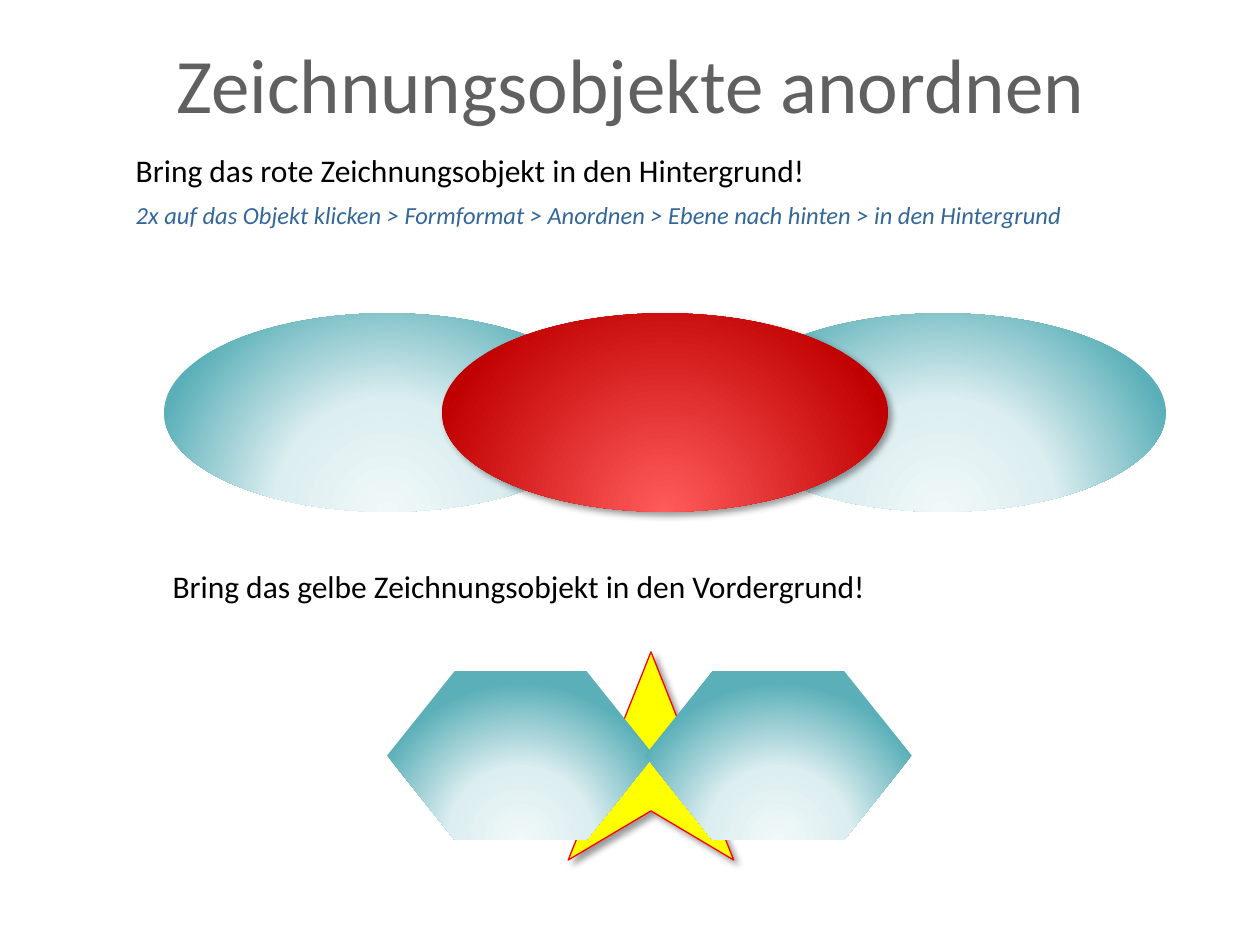
"""Build the slide on arranging drawing objects in front of and behind each other."""
from lxml import etree
from pptx import Presentation
from pptx.dml.color import RGBColor
from pptx.enum.shapes import MSO_SHAPE
from pptx.enum.text import MSO_ANCHOR, PP_ALIGN
from pptx.oxml import parse_xml
from pptx.oxml.ns import nsdecls, qn
from pptx.util import Pt

ELLIPSE, HEXAGON, STAR = MSO_SHAPE.OVAL, MSO_SHAPE.HEXAGON, MSO_SHAPE.STAR_5_POINT
LEFT, CENTER = PP_ALIGN.LEFT, PP_ALIGN.CENTER
TOP, MIDDLE = MSO_ANCHOR.TOP, MSO_ANCHOR.MIDDLE

THEME = {
    "font": "Calibri",
    "title": (44, "606060", False),
    "task": (18, "000000", False),
    "hint": (14, "336699", True),
    "teal": [(0, "F0F8F9"), (46, "DCEEF0"), (100, "5AAFB8")],
    "red": [(0, "FF5B5B"), (100, "C00000")],
    "star": "FFFF00",
    "star_line": "FF0000",
    "shadow": "000000",
}


def add_text(box, lines, align=LEFT, anchor=TOP):
    tf = s.shapes.add_textbox(*map(Pt, box)).text_frame
    tf.word_wrap = True
    tf.vertical_anchor = anchor
    for i, (text, style) in enumerate(lines):
        p = tf.add_paragraph() if i else tf.paragraphs[0]
        p.text = text
        p.alignment = align
        p.space_before = Pt(6 if i else 0)
        size, color, italic = THEME[style]
        p.font.name = THEME["font"]
        p.font.size = Pt(size)
        p.font.italic = italic
        p.font.color.rgb = RGBColor.from_string(color)


def add_figure(group, kind, box, stops=None, shadow=False):
    sp = group.shapes.add_shape(kind, *map(Pt, box))
    sp.shadow.inherit = False
    sp.line.fill.background()
    props = sp._element.spPr
    if stops:
        gs = "".join(f'<a:gs pos="{pos * 1000}"><a:srgbClr val="{color}"/></a:gs>' for pos, color in stops)
        props.find(qn("a:prstGeom")).addnext(parse_xml(
            f'<a:gradFill {nsdecls("a")} rotWithShape="1"><a:gsLst>{gs}</a:gsLst><a:path path="circle">'
            '<a:fillToRect l="50000" t="130000" r="50000" b="-30000"/></a:path></a:gradFill>'))
    if shadow:
        outer = etree.SubElement(props.find(qn("a:effectLst")), qn("a:outerShdw"), blurRad=str(Pt(4)),
                                 dist=str(Pt(3)), dir="2700000", algn="tl", rotWithShape="0")
        color = etree.SubElement(outer, qn("a:srgbClr"), val=THEME["shadow"])
        etree.SubElement(color, qn("a:alpha"), val="40000")
    return sp


prs = Presentation()
prs.slide_width, prs.slide_height = Pt(720), Pt(540)
s = prs.slides.add_slide(prs.slide_layouts[6])

add_text((70.5, 83, 623.5, 55), [
    ("Bring das rote Zeichnungsobjekt in den Hintergrund!", "task"),
    ("2x auf das Objekt klicken > Formformat > Anordnen > Ebene nach hinten > in den Hintergrund", "hint"),
])
add_text((36.5, 15, 648, 64), [("Zeichnungsobjekte anordnen", "title")], CENTER, MIDDLE)

ellipses = s.shapes.add_group_shape()
for column, stops, shadow in ((2, "teal", False), (0, "teal", False), (1, "red", True)):
    add_figure(ellipses, ELLIPSE, (93.75 + column * 158.75, 179, 255, 113.5), THEME[stops], shadow)

add_text((91.5, 320.5, 510.5, 29), [("Bring das gelbe Zeichnungsobjekt in den Vordergrund!", "task")])

figures = s.shapes.add_group_shape()
star = add_figure(figures, STAR, (295.5, 372.5, 153, 119), shadow=True)
star.fill.solid()
star.fill.fore_color.rgb = RGBColor.from_string(THEME["star"])
star.line.color.rgb = RGBColor.from_string(THEME["star_line"])
star.line.width = Pt(0.75)
for column in range(2):
    hexagon = add_figure(figures, HEXAGON, (221.25 + column * 147.25, 383.5, 152.5, 96.5), THEME["teal"])
    hexagon.adjustments[0] = 0.4

prs.save("out.pptx")
